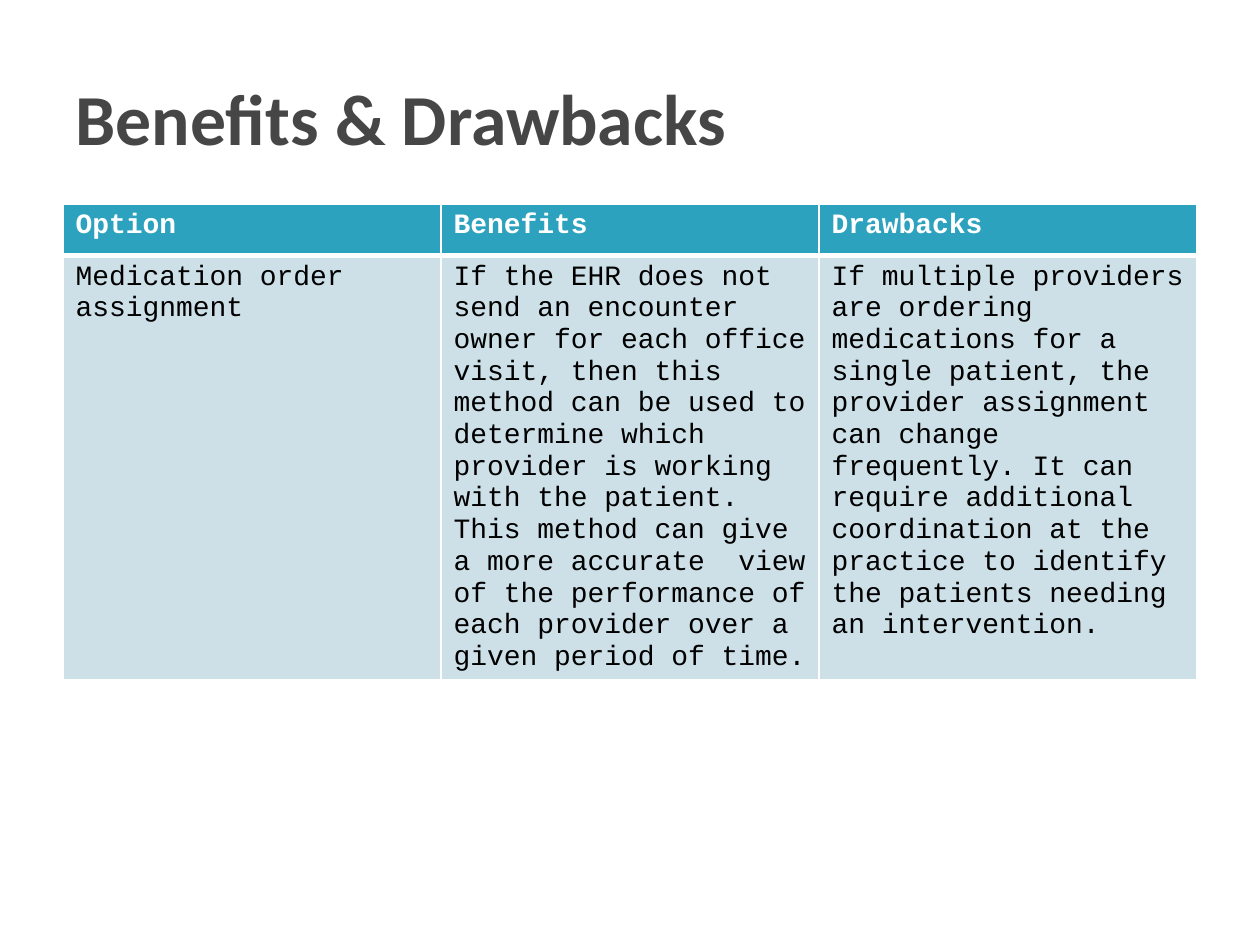
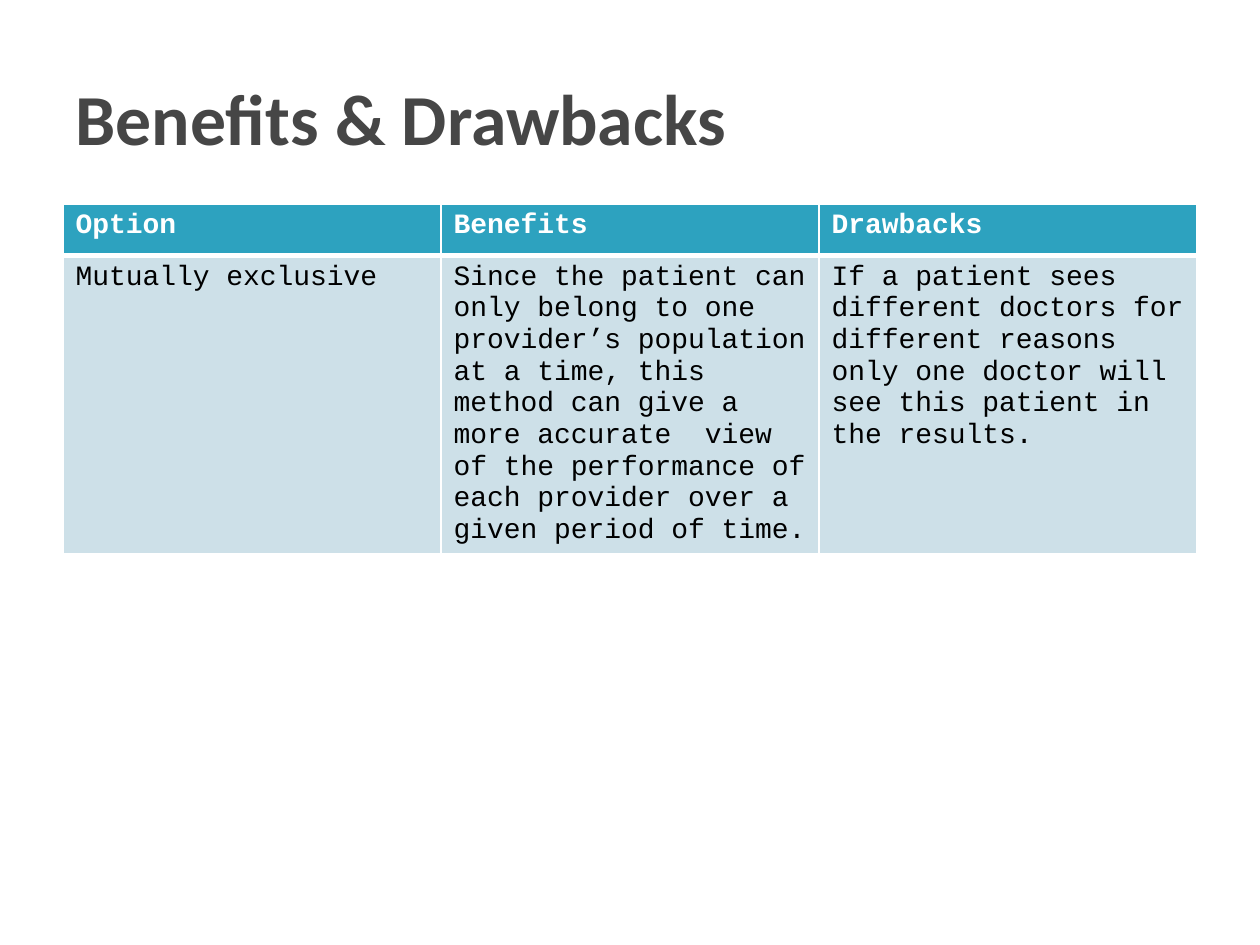
from lxml.etree import SubElement
from pptx import Presentation
from pptx.dml.color import RGBColor
from pptx.enum.text import MSO_ANCHOR, PP_ALIGN
from pptx.oxml.ns import qn
from pptx.util import Cm, Pt

COLORS = {
    "title": "464646",
    "head": "2DA2BF",
    "body": "CDE0E8",
    "line": "FFFFFF",
    "light": "FFFFFF",
    "dark": "000000",
}
FONTS = {
    "title": {"name": "Calibri", "size": Pt(41), "bold": True},
    "head": {"name": "Courier New", "size": Pt(16), "bold": True},
    "body": {"name": "Courier New", "size": Pt(16), "bold": False},
}
LEFT, WIDTH = Cm(1.27), Cm(22.86)
TITLE = "Benefits & Drawbacks"
HEADS = ["Option", "Benefits", "Drawbacks"]
OPTIONS = [
    [
        "Medication order assignment",
        "If the EHR does not send an encounter owner for each office visit, "
        "then this method can be used to determine which provider is working "
        "with the patient. This method can give a more accurate  view of the "
        "performance of each provider over a given period of time.",
        "If multiple providers are ordering medications for a single patient, "
        "the provider assignment can change frequently. It can require "
        "additional coordination at the practice to identify the patients "
        "needing an intervention.",
    ],
    [
        "Mutually exclusive",
        "Since the patient can only belong to one provider’s population at a "
        "time, this method can give a more accurate  view of the performance "
        "of each provider over a given period of time.",
        "If a patient sees different doctors for different reasons only one "
        "doctor will see this patient in the results.",
    ],
]


def shade(name):
    return RGBColor.from_string(COLORS[name])


def assign(target, values):
    for key, value in values.items():
        setattr(target, key, value)


def write(frame, text, style, color):
    para = frame.paragraphs[0]
    para.alignment = PP_ALIGN.LEFT
    run = para.add_run()
    run.text = text
    assign(run.font, FONTS[style])
    run.font.color.rgb = shade(color)


def add_title(slide, text):
    title = slide.shapes.title
    assign(title, {"left": LEFT, "top": Cm(0.76), "width": WIDTH, "height": Cm(3.18)})
    assign(title.text_frame, {"vertical_anchor": MSO_ANCHOR.MIDDLE, "word_wrap": True})
    write(title.text_frame, text, "title", "title")


def add_edges(cell, widths):
    props = cell._tc.get_or_add_tcPr()
    for side, width in widths.items():
        edge = SubElement(props, qn(f"a:ln{side}"), w=str(Pt(width)))
        fill = SubElement(edge, qn("a:solidFill"))
        SubElement(fill, qn("a:srgbClr"), val=COLORS["line"])


def fill_row(cells, texts, style, color, widths):
    for cell, text in zip(cells, texts):
        add_edges(cell, widths)
        cell.fill.solid()
        cell.fill.fore_color.rgb = shade(style)
        write(cell.text_frame, text, style, color)


def add_grid(slide, texts):
    height = Cm(1.04)
    frame = slide.shapes.add_table(2, len(HEADS), LEFT, Cm(4.11), WIDTH, 2 * height)
    head, body = frame.table.rows
    fill_row(head.cells, HEADS, "head", "light", {"L": 1, "R": 1, "T": 1, "B": 3})
    fill_row(body.cells, texts, "body", "dark", {"L": 1, "R": 1, "T": 3, "B": 1})


def main():
    deck = Presentation()
    assign(deck, {"slide_width": Cm(25.4), "slide_height": Cm(19.05)})
    layout = deck.slide_layouts.get_by_name("Title Only")
    for texts in OPTIONS:
        slide = deck.slides.add_slide(layout)
        add_grid(slide, texts)
        add_title(slide, TITLE)
    deck.save("out.pptx")


if __name__ == "__main__":
    main()
